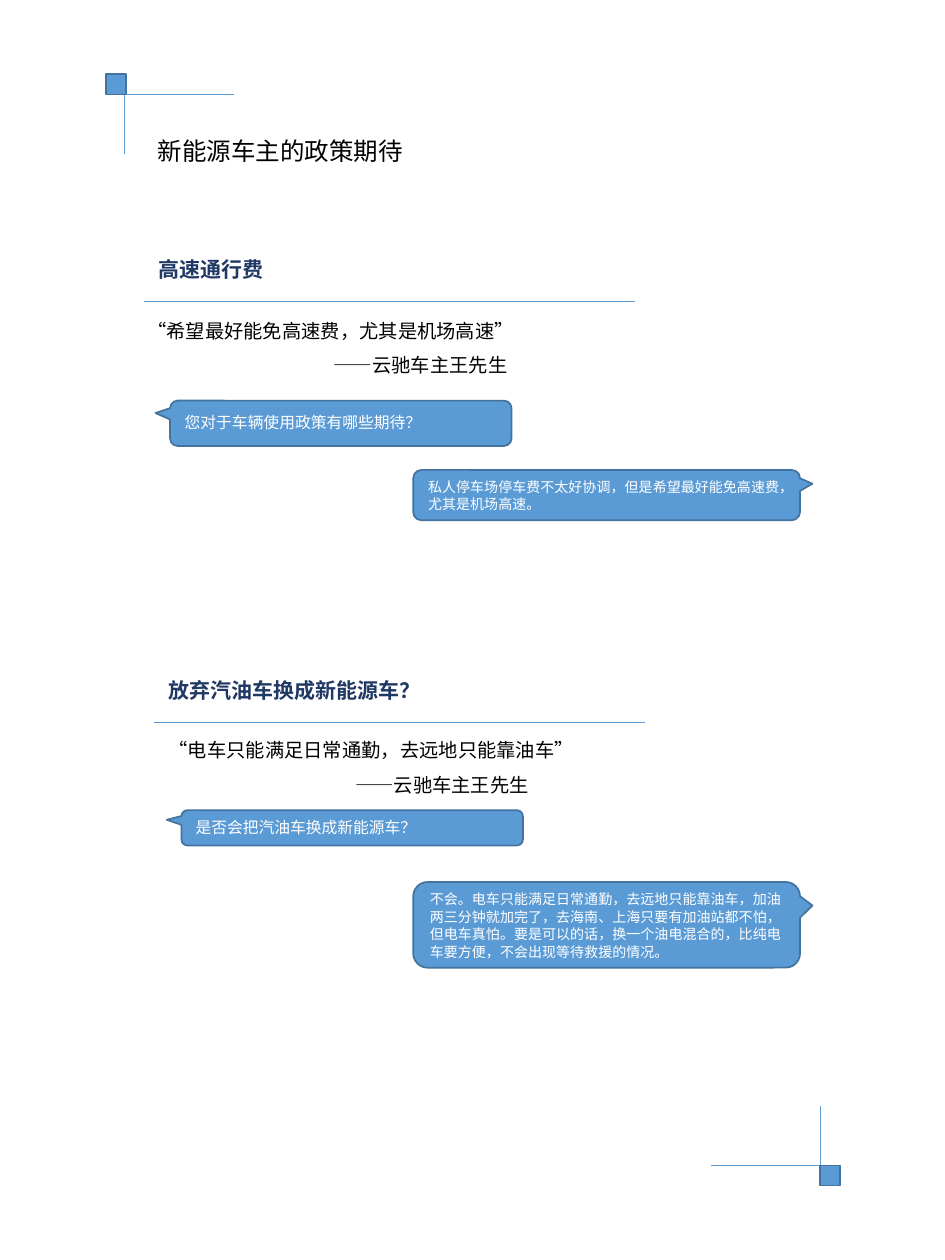
from dataclasses import dataclass

from lxml.etree import SubElement
from pptx import Presentation
from pptx.dml.color import RGBColor
from pptx.enum.shapes import MSO_CONNECTOR as CONN, MSO_SHAPE as SHAPE
from pptx.enum.text import MSO_ANCHOR as ANCHOR, MSO_AUTO_SIZE as AUTO, PP_ALIGN as ALIGN
from pptx.oxml.ns import qn
from pptx.slide import Slide
from pptx.util import Inches, Pt

FONT = "Noto Sans CJK SC"
BLUE, EDGE, NAVY, BLACK, WHITE = "5B9BD5", "43739E", "203864", "000000", "FFFFFF"


@dataclass
class Bubble:
    x: float
    y: float
    w: float
    h: float
    size: int
    tail: float
    text: str


@dataclass
class Section:
    heading: str
    heading_at: tuple[float, float]
    rule_at: tuple[float, float]
    quote: str
    speaker: str
    quote_at: tuple[float, float]
    bubbles: list[Bubble]


SECTIONS = [
    Section("高速通行费", (1.16, 1.99), (1.14, 2.39),
            "“希望最好能免高速费，尤其是机场高速”", "——云驰车主王先生", (1.07, 2.39),
            [Bubble(1.35, 3.18, 2.71, 0.36, 9, -0.543, "您对于车辆使用政策有哪些期待？"),
             Bubble(3.28, 3.73, 3.07, 0.4, 8, 0.532,
                    "私人停车场停车费不太好协调，但是希望最好能免高速费，尤其是机场高速。")]),
    Section("放弃汽油车换成新能源车？", (1.24, 5.33), (1.22, 5.73),
            "“电车只能满足日常通勤，去远地只能靠油车”", "——云驰车主王先生", (1.24, 5.72),
            [Bubble(1.44, 6.43, 2.71, 0.28, 9, -0.543, "是否会把汽油车换成新能源车？"),
             Bubble(3.28, 7, 3.07, 0.68, 8, 0.532,
                    "不会。电车只能满足日常通勤，去远地只能靠油车，加油两三分钟就加完了，"
                    "去海南、上海只要有加油站都不怕，但电车真怕。要是可以的话，"
                    "换一个油电混合的，比纯电车要方便，不会出现等待救援的情况。")]),
]


def rgb(color: str) -> RGBColor:
    return RGBColor.from_string(color)


def add_text(p, text: str, *, size: float, color: str = BLACK, bold: bool = False,
             spacing=None, indent: float = 0) -> None:
    p.alignment = ALIGN.LEFT
    if spacing:
        p.line_spacing = spacing
    if indent:
        p._p.get_or_add_pPr().set("marL", str(Inches(indent)))
    r = p.add_run()
    r.text = text
    r.font.size, r.font.bold, r.font.name = Pt(size), bold, FONT
    r.font.color.rgb = rgb(color)
    SubElement(r._r.get_or_add_rPr(), qn("a:ea")).set("typeface", FONT)


def add_box(s: Slide, x: float, y: float, w: float, h: float):
    tf = s.shapes.add_textbox(Inches(x), Inches(y), Inches(w), Inches(h)).text_frame
    tf.word_wrap = True
    return tf


def add_line(s: Slide, x1: float, y1: float, x2: float, y2: float) -> None:
    ln = s.shapes.add_connector(CONN.STRAIGHT, Inches(x1), Inches(y1), Inches(x2), Inches(y2))
    ln.line.color.rgb = rgb(BLUE)
    ln.line.width = Pt(0.5)
    SubElement(ln._element.spPr, qn("a:effectLst"))


def add_blue(s: Slide, kind: SHAPE, x: float, y: float, w: float, h: float):
    sp = s.shapes.add_shape(kind, Inches(x), Inches(y), Inches(w), Inches(h))
    sp.shadow.inherit = False
    sp.fill.solid()
    sp.fill.fore_color.rgb = rgb(BLUE)
    sp.line.color.rgb = rgb(EDGE)
    sp.line.width = Pt(1)
    return sp


def add_corner(s: Slide, x: float, y: float, d: int) -> None:
    side = 0.16
    add_line(s, x - 0.15 * d, y, x + 0.87 * d, y)
    add_line(s, x, y - side * d, x, y + 0.47 * d)
    add_blue(s, SHAPE.RECTANGLE, min(x, x - 0.15 * d), min(y, y - side * d), side, side)


def add_bubble(s: Slide, b: Bubble) -> None:
    sp = add_blue(s, SHAPE.ROUNDED_RECTANGULAR_CALLOUT, b.x, b.y, b.w, b.h)
    for i, value in enumerate((b.tail, -0.226, 0.167)):
        sp.adjustments[i] = value
    tf = sp.text_frame
    tf.word_wrap, tf.vertical_anchor = True, ANCHOR.MIDDLE
    add_text(tf.paragraphs[0], b.text, size=b.size, color=WHITE, spacing=Pt(10))


def add_section(s: Slide, sec: Section) -> None:
    x, y = sec.rule_at
    add_line(s, x, y, x + 3.9, y)
    tf = add_box(s, *sec.quote_at, 5.19, 0.66)
    add_text(tf.paragraphs[0], sec.quote, size=11, spacing=1.5)
    add_text(tf.add_paragraph(), sec.speaker, size=11, spacing=1.5, indent=1.48)
    tf = add_box(s, *sec.heading_at, 3.03, 0.3)
    add_text(tf.paragraphs[0], sec.heading, size=12, color=NAVY, bold=True)
    for b in sec.bubbles:
        add_bubble(s, b)


def add_title(s: Slide, text: str) -> None:
    sp = s.shapes.title
    sp.left, sp.top, sp.width, sp.height = map(Inches, (1.15, 1.03, 4.33, 0.34))
    tf = sp.text_frame
    tf.word_wrap, tf.auto_size, tf.vertical_anchor = True, AUTO.NONE, ANCHOR.TOP
    add_text(tf.paragraphs[0], text, size=14)


def main() -> None:
    prs = Presentation()
    prs.slide_width, prs.slide_height = Inches(7.5), Inches(10)
    s = prs.slides.add_slide(prs.slide_layouts[5])
    add_corner(s, 0.99, 0.75, 1)
    add_title(s, "新能源车主的政策期待")
    for sec in SECTIONS:
        add_section(s, sec)
    add_corner(s, 6.51, 9.25, -1)
    prs.save("out.pptx")


if __name__ == "__main__":
    main()
